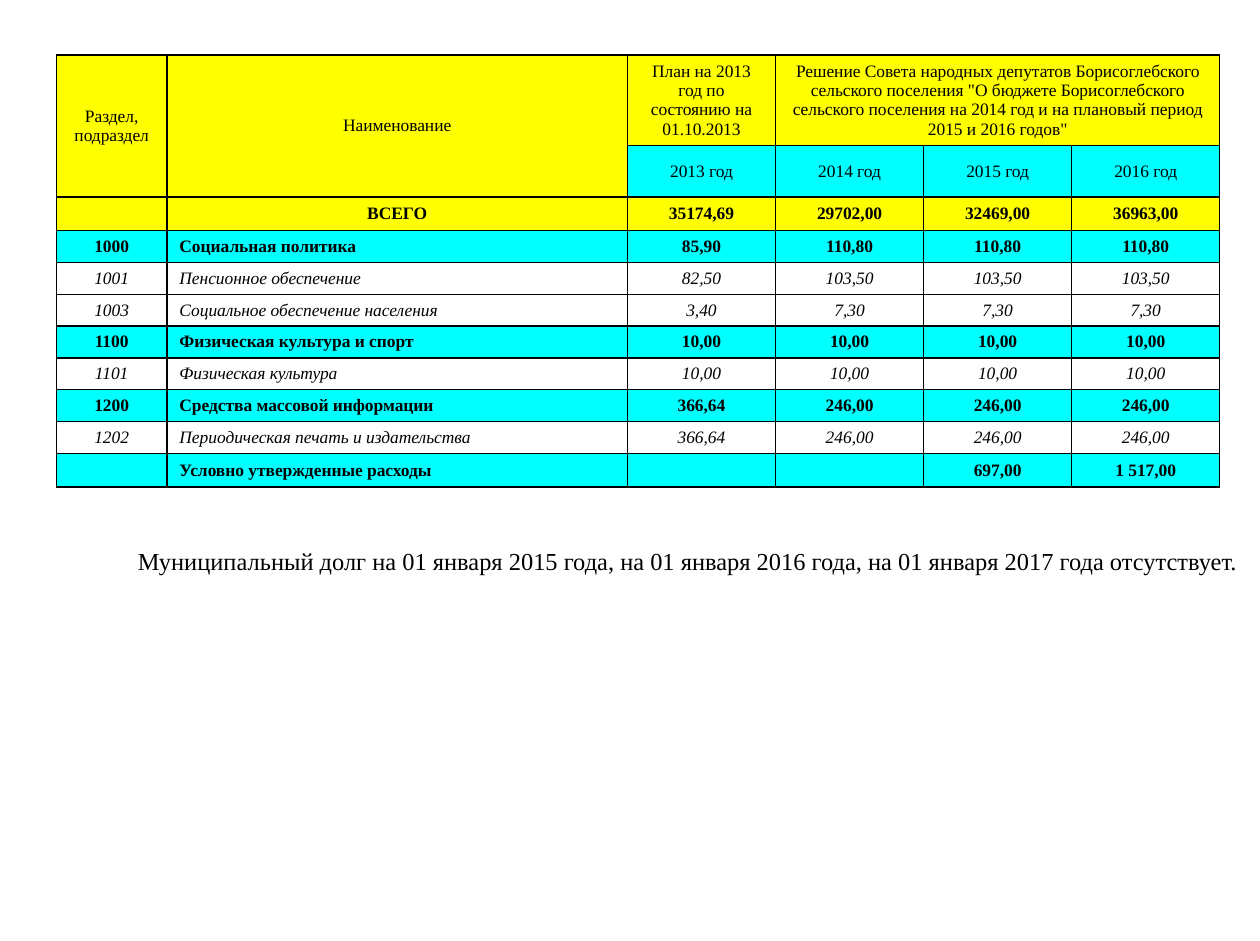
from dataclasses import dataclass
from lxml import etree
from pptx import Presentation
from pptx import util as u
from pptx.dml.color import RGBColor
from pptx.enum import text
from pptx.oxml.ns import qn


@dataclass(frozen=True)
class Theme:
    font: str = "Times New Roman"
    ink: str = "000000"
    yellow: str = "FFFF00"
    cyan: str = "00FFFF"
    table_size: int = 10
    note_size: int = 14
    border: int = 1


THEME = Theme()
SLIDE_SIZE = (10.04, 7.5)
COLUMNS = [0.88, 3.67] + [1.18] * 4
HEADER_ROWS = [0.72, 0.41]
BODY_ROW = 0.25
NAME_COLUMN = 1

HEADER = [
    ["Раздел, подраздел", "Наименование", "План на 2013 год по состоянию на 01.10.2013",
     "Решение Совета народных депутатов Борисоглебского сельского поселения "
     "\"О бюджете Борисоглебского сельского поселения на 2014 год "
     "и на плановый период 2015 и 2016 годов\"", "", ""],
    ["", ""] + [f"{year} год" for year in range(2013, 2017)],
]
MERGES = [((0, 0), (1, 0)), ((0, 1), (1, 1)), ((0, 3), (0, 5))]

# Row kind, section code, name, then the amounts for 2013 to 2016
BUDGET = [
    ("total", "", "ВСЕГО", "35174,69", "29702,00", "32469,00", "36963,00"),
    ("section", "1000", "Социальная политика", "85,90", "110,80", "110,80", "110,80"),
    ("item", "1001", "Пенсионное обеспечение", "82,50", "103,50", "103,50", "103,50"),
    ("item", "1003", "Социальное обеспечение населения", "3,40", "7,30", "7,30", "7,30"),
    ("section", "1100", "Физическая культура и спорт", "10,00", "10,00", "10,00", "10,00"),
    ("item", "1101", "Физическая культура", "10,00", "10,00", "10,00", "10,00"),
    ("section", "1200", "Средства массовой информации", "366,64", "246,00", "246,00", "246,00"),
    ("item", "1202", "Периодическая печать и издательства", "366,64", "246,00", "246,00", "246,00"),
    ("section", "", "Условно утвержденные расходы", "", "", "697,00", "1 517,00"),
]
ROW_FORMATS = {
    "total": (THEME.yellow, {"bold": True}),
    "section": (THEME.cyan, {"bold": True}),
    "item": (None, {"italic": True}),
}
DEBT_NOTE = ("Муниципальный долг на 01 января 2015 года, на 01 января 2016 года, "
             "на 01 января 2017 года отсутствует.")


def write(paragraph, words, size, align, font_format):
    paragraph.alignment = align
    if not words:
        # An empty cell keeps the row low only if its end mark is small too
        etree.SubElement(paragraph._p, qn("a:endParaRPr"), sz=str(size * 100))
        return
    run = paragraph.add_run()
    run.text = words
    values = {"name": THEME.font, "size": u.Pt(size), **font_format}
    for attribute, value in values.items():
        setattr(run.font, attribute, value)
    run.font.color.rgb = RGBColor.from_string(THEME.ink)


def draw_borders(cell):
    properties = cell._tc.get_or_add_tcPr()
    for position, side in enumerate(("lnL", "lnR", "lnT", "lnB")):
        line = etree.Element(qn(f"a:{side}"), w=str(u.Pt(THEME.border)))
        solid = etree.SubElement(line, qn("a:solidFill"))
        etree.SubElement(solid, qn("a:srgbClr"), val=THEME.ink)
        properties.insert(position, line)


def fill_cell(cell, words, fill, align=text.PP_ALIGN.CENTER, font_format=None):
    cell.vertical_anchor = text.MSO_ANCHOR.MIDDLE
    if fill:
        cell.fill.solid()
        cell.fill.fore_color.rgb = RGBColor.from_string(fill)
    else:
        cell.fill.background()
    draw_borders(cell)
    write(cell.text_frame.paragraphs[0], words, THEME.table_size, align, font_format or {})


def add_grid(slide, left, top):
    """Add an empty table with the column and row sizes of the budget."""
    rows = HEADER_ROWS + [BODY_ROW] * len(BUDGET)
    table = slide.shapes.add_table(
        len(rows), len(COLUMNS), u.Inches(left), u.Inches(top),
        u.Inches(sum(COLUMNS)), u.Inches(sum(rows))).table
    for flag in ("first_row", "horz_banding"):
        setattr(table, flag, False)
    for column, width in zip(table.columns, COLUMNS):
        column.width = u.Inches(width)
    for row, height in zip(table.rows, rows):
        row.height = u.Inches(height)
    return table


def add_budget(slide):
    table = add_grid(slide, 0.45, 0.44)
    for r, titles in enumerate(HEADER):
        for c, title in enumerate(titles):
            is_year = r == 1 and c > NAME_COLUMN
            fill_cell(table.cell(r, c), title, THEME.cyan if is_year else THEME.yellow)
    for first, last in MERGES:
        table.cell(*first).merge(table.cell(*last))
    for r, (kind, *entries) in enumerate(BUDGET, len(HEADER)):
        fill, font_format = ROW_FORMATS[kind]
        for c, entry in enumerate(entries):
            is_name = c == NAME_COLUMN and kind != "total"
            align = text.PP_ALIGN.LEFT if is_name else text.PP_ALIGN.CENTER
            fill_cell(table.cell(r, c), entry, fill, align, font_format)


def add_note(slide, words, left, top, width, height, indent):
    box = slide.shapes.add_textbox(*map(u.Inches, (left, top, width, height)))
    box.text_frame.word_wrap = True
    paragraph = box.text_frame.paragraphs[0]
    write(paragraph, words, THEME.note_size, text.PP_ALIGN.JUSTIFY, {})
    paragraph._p.get_or_add_pPr().set("indent", str(u.Inches(indent)))


def main():
    deck = Presentation()
    deck.slide_width, deck.slide_height = map(u.Inches, SLIDE_SIZE)
    slide = deck.slides.add_slide(deck.slide_layouts[6])
    add_budget(slide)
    add_note(slide, DEBT_NOTE, 0.51, 4.3, 9.53, 0.33, indent=0.49)
    deck.save("out.pptx")


if __name__ == "__main__":
    main()
